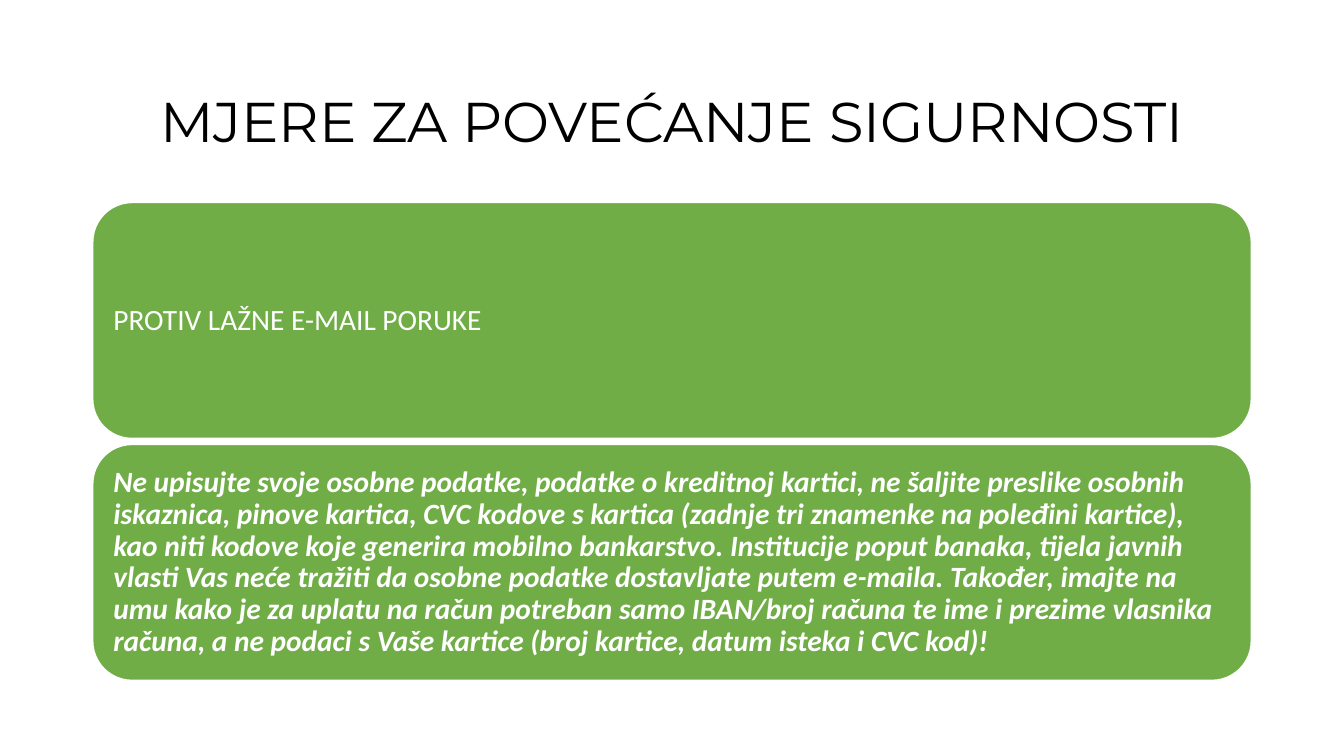
import pptx
import pptx.util
import pptx.dml.color
import pptx.enum.shapes
import pptx.enum.text

COLOURS = {"title": "000000", "card": "70AD47", "card_text": "FFFFFF", "outline": "FFFFFF"}
WIDTH, HEIGHT = 13.33, 7.5
MARGIN = 0.92
CONTENT_WIDTH = WIDTH - 2 * MARGIN
CARD_GAP = 0.06
CARD_INSET = 0.09

TITLE = "MJERE ZA POVEĆANJE SIGURNOSTI"
CARDS = [
    ("PROTIV LAŽNE E-MAIL PORUKE", False),
    (
        "Ne upisujte svoje osobne podatke, podatke o kreditnoj kartici, ne šaljite preslike "
        "osobnih iskaznica, pinove kartica, CVC kodove s kartica (zadnje tri znamenke na "
        "poleđini kartice), kao niti kodove koje generira mobilno bankarstvo. Institucije "
        "poput banaka, tijela javnih vlasti Vas neće tražiti da osobne podatke dostavljate "
        "putem e-maila. Također, imajte na umu kako je za uplatu na račun potreban samo "
        "IBAN/broj računa te ime i prezime vlasnika računa, a ne podaci s Vaše kartice "
        "(broj kartice, datum isteka i CVC kod)!",
        True,
    ),
]


def colour(name):
    return pptx.dml.color.RGBColor.from_string(COLOURS[name])


def inches(box):
    return [pptx.util.Inches(length) for length in box]


def write_text(shape, text, font, size, colour_name, align, emphasis=False):
    frame = shape.text_frame
    frame.word_wrap = True
    frame.vertical_anchor = pptx.enum.text.MSO_ANCHOR.MIDDLE
    frame.text = text
    para = frame.paragraphs[0]
    para.alignment = align
    para.line_spacing = 0.9
    span = para.runs[0]
    span.font.name = font
    span.font.size = pptx.util.Pt(size)
    span.font.bold = emphasis
    span.font.italic = emphasis
    span.font.color.rgb = colour(colour_name)


def add_title(page, box):
    title = page.shapes.add_textbox(*inches(box))
    write_text(title, TITLE, "Montserrat", 40, "title", pptx.enum.text.PP_ALIGN.CENTER)


def add_card(page, box, text, emphasis):
    card = page.shapes.add_shape(
        pptx.enum.shapes.MSO_SHAPE.ROUNDED_RECTANGLE, *inches(box))
    card.shadow.inherit = False
    card.fill.solid()
    card.fill.fore_color.rgb = colour("card")
    card.line.color.rgb = colour("outline")
    card.line.width = pptx.util.Pt(1)
    frame = card.text_frame
    inset = pptx.util.Inches(CARD_INSET)
    frame.margin_left = frame.margin_right = inset
    frame.margin_top = frame.margin_bottom = inset
    write_text(card, text, "Calibri", 21, "card_text",
               pptx.enum.text.PP_ALIGN.LEFT, emphasis)


def add_cards(page, box):
    left, top, width, height = box
    card_height = (height - CARD_GAP * (len(CARDS) - 1)) / len(CARDS)
    for row, (text, emphasis) in enumerate(CARDS):
        card_top = top + row * (card_height + CARD_GAP)
        add_card(page, (left, card_top, width, card_height), text, emphasis)


def main():
    deck = pptx.Presentation()
    deck.slide_width, deck.slide_height = inches((WIDTH, HEIGHT))
    page = deck.slides.add_slide(deck.slide_layouts[6])
    add_title(page, (MARGIN, 0.61, CONTENT_WIDTH, 1.24))
    add_cards(page, (MARGIN, 2.01, CONTENT_WIDTH, 4.74))
    deck.save("out.pptx")


if __name__ == "__main__":
    main()
